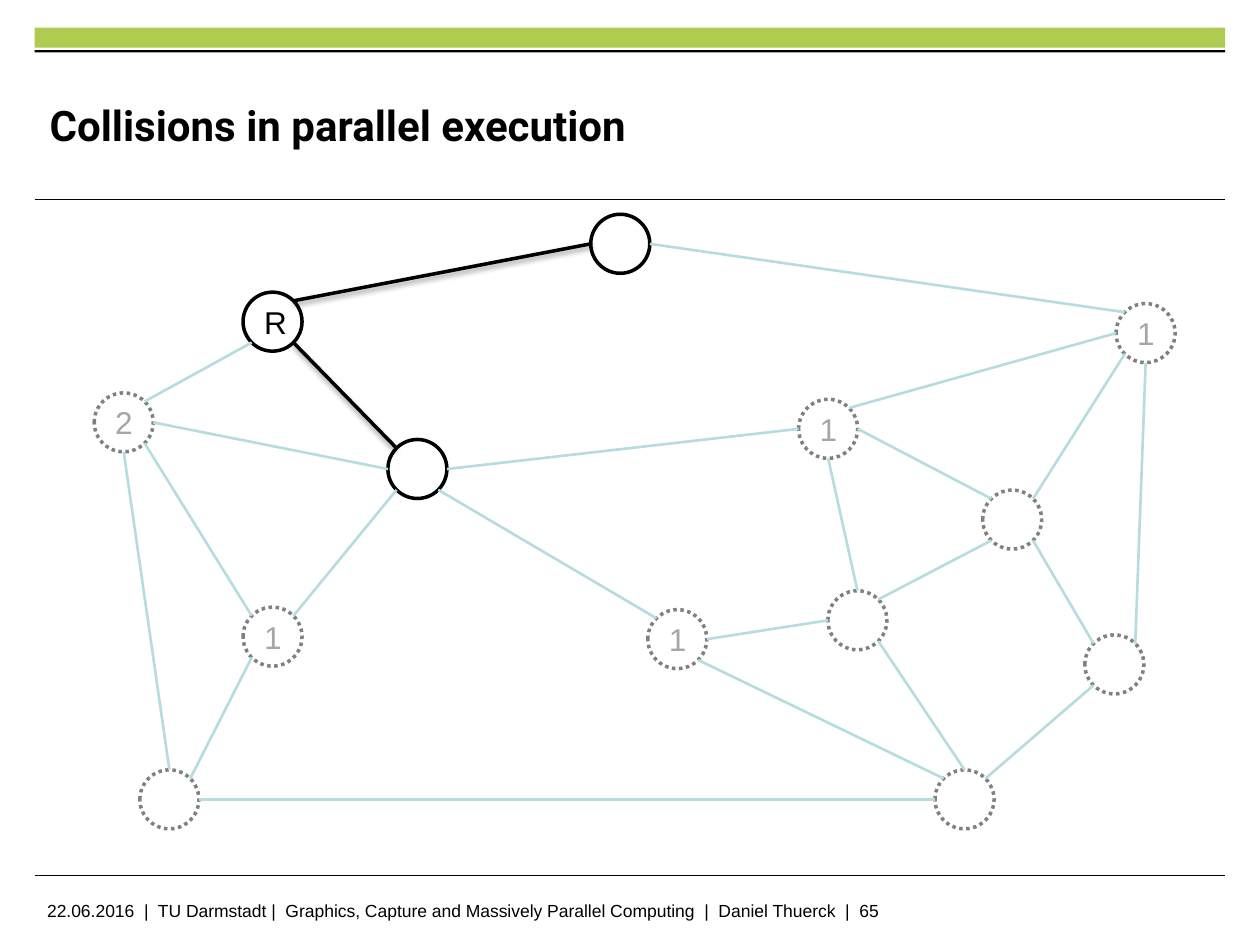
from math import cos, radians, sin

from lxml.etree import SubElement
from pptx import Presentation
from pptx.dml.color import RGBColor
from pptx.enum.dml import MSO_LINE
from pptx.enum.shapes import MSO_CONNECTOR, MSO_SHAPE
from pptx.enum.text import MSO_ANCHOR, PP_ALIGN
from pptx.oxml.ns import qn
from pptx.util import Cm, Pt

BLACK = RGBColor(0x00, 0x00, 0x00)
WHITE = RGBColor(0xFF, 0xFF, 0xFF)
GREEN = RGBColor(0xAF, 0xCC, 0x50)
GRAY = RGBColor(0x80, 0x80, 0x80)
LIGHT_GRAY = RGBColor(0xA6, 0xA6, 0xA6)
PALE_BLUE = RGBColor(0xB6, 0xDC, 0xDF)

DIAMETER = 1.19
TOP, TOP_LEFT, LEFT, BOTTOM_LEFT, BOTTOM, BOTTOM_RIGHT, RIGHT, TOP_RIGHT = range(8)

presentation = Presentation()
presentation.slide_width = Cm(25.4)
presentation.slide_height = Cm(19.05)
slide = presentation.slides.add_slide(presentation.slide_layouts[5])
shapes = slide.shapes


def add_line(start, end, color, width):
    line = shapes.add_connector(
        MSO_CONNECTOR.STRAIGHT, *(Cm(value) for value in (*start, *end))
    )
    line.line.color.rgb = color
    line.line.width = Pt(width)
    effects = SubElement(line._element.spPr, qn("a:effectLst"))
    return line, effects


def write(frame, text, size, color, font="Arial", bold=False):
    frame.text = text
    frame.vertical_anchor = MSO_ANCHOR.MIDDLE
    formats = {"size": Pt(size), "name": font, "bold": bold}
    paragraph = frame.paragraphs[0]
    for attribute, value in formats.items():
        setattr(paragraph.font, attribute, value)
    paragraph.font.color.rgb = color
    return paragraph


for bar_top, bar_height, bar_color in ((0.56, 0.4, GREEN), (1.01, 0.05, BLACK)):
    bar = shapes.add_shape(
        MSO_SHAPE.RECTANGLE, Cm(0.7), Cm(bar_top), Cm(24), Cm(bar_height)
    )
    bar.shadow.inherit = False
    bar.fill.solid()
    bar.fill.fore_color.rgb = bar_color
    bar.line.fill.background()

for rule_y in (4.03, 17.65):
    add_line((0.7, rule_y), (24.7, rule_y), BLACK, 0.6)

footer = shapes.add_textbox(Cm(0.7), Cm(18.03), Cm(20), Cm(0.64)).text_frame
footer.word_wrap = True
write(
    footer,
    "22.06.2016  |  TU Darmstadt |  Graphics, Capture and Massively Parallel Computing"
    "  |  Daniel Thuerck  |  65",
    10,
    BLACK,
)

title = shapes.title
placement = {"left": Cm(1), "top": Cm(1.35), "width": Cm(18.45), "height": Cm(2.34)}
for attribute, value in placement.items():
    setattr(title, attribute, value)
for side in ("left", "top", "right", "bottom"):
    setattr(title.text_frame, f"margin_{side}", 0)
heading = write(
    title.text_frame, "Collisions in parallel execution", 24, BLACK, "Roboto", True
)
heading.alignment = PP_ALIGN.LEFT

nodes = {
    "west": (1.9, 7.92, "2", False),
    "southwest": (2.82, 15.52, "", False),
    "lower_left": (4.9, 12.24, "1", False),
    "middle": (7.82, 8.86, "", True),
    "root": (4.9, 5.89, "R", True),
    "north": (11.91, 4.32, "", True),
    "northeast": (22.5, 6.12, "1", False),
    "inner": (16.1, 8.05, "1", False),
    "south": (18.85, 15.52, "", False),
    "southeast": (21.87, 12.8, "", False),
    "east": (19.81, 9.88, "", False),
    "hub": (16.69, 11.91, "", False),
    "center": (13.06, 12.29, "1", False),
}

circles = {}
for name, (left, top, label, active) in nodes.items():
    circle = shapes.add_shape(
        MSO_SHAPE.OVAL, Cm(left), Cm(top), Cm(DIAMETER), Cm(DIAMETER)
    )
    circle.shadow.inherit = False
    circle.line.width = Pt(2)
    if active:
        circle.fill.solid()
        circle.fill.fore_color.rgb = WHITE
        circle.line.color.rgb = BLACK
    else:
        circle.fill.background()
        circle.line.color.rgb = GRAY
        circle.line.dash_style = MSO_LINE.ROUND_DOT
    if label:
        mark = write(circle.text_frame, label, 18, BLACK if active else LIGHT_GRAY)
        mark.alignment = PP_ALIGN.CENTER
    circles[name] = circle

edges = [
    ("west", TOP_RIGHT, "root", BOTTOM_LEFT),
    ("root", TOP_RIGHT, "north", LEFT),
    ("west", RIGHT, "middle", LEFT),
    ("root", BOTTOM_RIGHT, "middle", TOP_LEFT),
    ("middle", RIGHT, "inner", LEFT),
    ("north", RIGHT, "northeast", TOP_LEFT),
    ("inner", TOP_RIGHT, "northeast", LEFT),
    ("west", BOTTOM, "southwest", TOP),
    ("west", BOTTOM_RIGHT, "lower_left", TOP_LEFT),
    ("lower_left", BOTTOM_LEFT, "southwest", TOP_RIGHT),
    ("lower_left", TOP_RIGHT, "middle", BOTTOM_LEFT),
    ("center", RIGHT, "hub", LEFT),
    ("middle", BOTTOM_RIGHT, "center", TOP_LEFT),
    ("inner", BOTTOM, "hub", TOP),
    ("inner", RIGHT, "east", TOP_LEFT),
    ("east", BOTTOM_LEFT, "hub", TOP_RIGHT),
    ("southwest", RIGHT, "south", LEFT),
    ("south", TOP_RIGHT, "southeast", BOTTOM_LEFT),
    ("northeast", BOTTOM, "southeast", TOP_RIGHT),
    ("hub", BOTTOM_RIGHT, "south", TOP),
    ("east", BOTTOM_RIGHT, "southeast", TOP_LEFT),
    ("center", BOTTOM_RIGHT, "south", TOP_LEFT),
    ("east", TOP_RIGHT, "northeast", BOTTOM_LEFT),
]

radius = DIAMETER / 2
for origin, origin_site, target, target_site in edges:
    ends = []
    for name, site in ((origin, origin_site), (target, target_site)):
        left, top = nodes[name][:2]
        angle = radians(45 * site)
        ends.append((left + radius * (1 - sin(angle)), top + radius * (1 - cos(angle))))
    active = nodes[origin][3] and nodes[target][3]
    edge, effects = add_line(*ends, BLACK if active else PALE_BLUE, 2 if active else 1.5)
    joints = edge._element.find(".//" + qn("p:cNvCxnSpPr"))
    for tag, name, site in (
        ("a:stCxn", origin, origin_site),
        ("a:endCxn", target, target_site),
    ):
        SubElement(joints, qn(tag), id=str(circles[name].shape_id), idx=str(site))
    if active:
        shadow = SubElement(
            effects, qn("a:outerShdw"),
            blurRad="40000", dist="20000", dir="5400000", rotWithShape="0",
        )
        shade = SubElement(shadow, qn("a:srgbClr"), val=str(BLACK))
        SubElement(shade, qn("a:alpha"), val="38000")

presentation.save("out.pptx")
